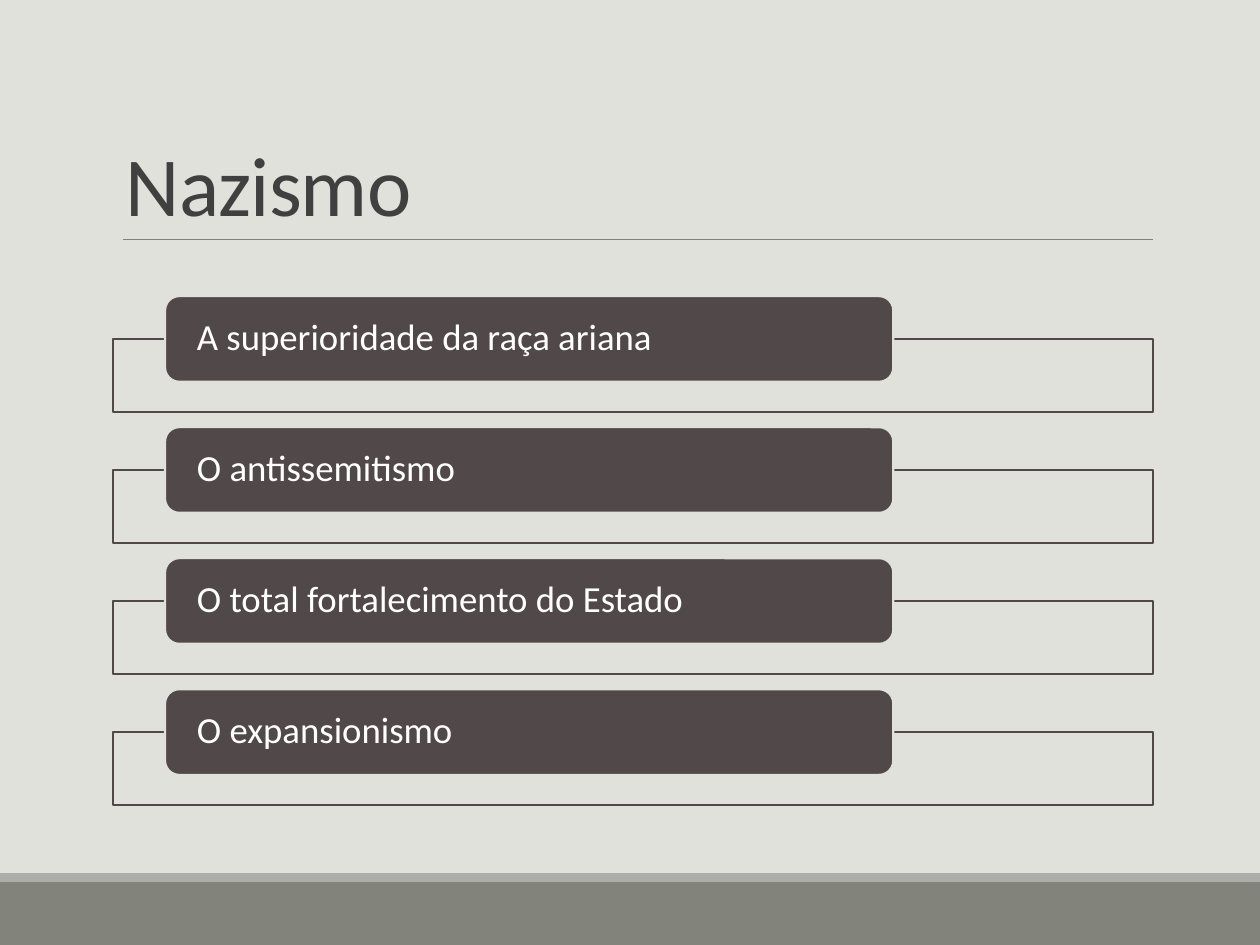
from pptx import Presentation
from pptx.dml.color import RGBColor
from pptx.enum.shapes import MSO_CONNECTOR as Connector, MSO_SHAPE as Shape
from pptx.enum.text import MSO_ANCHOR as Anchor, PP_ALIGN as Align
from pptx.oxml.ns import qn
from pptx.util import Inches, Pt
from lxml.etree import SubElement

BACKGROUND = "E1E1DB"
DARK = "514949"
TOPICS = [
    "A superioridade da raça ariana",
    "O antissemitismo",
    "O total fortalecimento do Estado",
    "O expansionismo",
]


def color(value):
    return RGBColor.from_string(value)


def write(shape, text, size, ink, font="Calibri", anchor=Anchor.MIDDLE,
          margins=(0.1, 0.05), line_spacing=0.9, tracking=None):
    frame = shape.text_frame
    frame.word_wrap = True
    frame.vertical_anchor = anchor
    frame.margin_left = frame.margin_right = Inches(margins[0])
    frame.margin_top = frame.margin_bottom = Inches(margins[1])
    paragraph = frame.paragraphs[0]
    paragraph.alignment = Align.LEFT
    paragraph.line_spacing = line_spacing
    run = paragraph.add_run()
    run.text = text
    run.font.name = font
    run.font.size = Pt(size)
    run.font.color.rgb = color(ink)
    if tracking is not None:
        run._r.get_or_add_rPr().set("spc", str(int(tracking * 100)))


class SlideBuilder:
    line_width = 1.25

    def __init__(self, slide, background):
        self.slide = slide
        slide.background.fill.solid()
        slide.background.fill.fore_color.rgb = color(background)

    def box(self, left, top, width, height, fill, line=None, kind=Shape.RECTANGLE, opacity=None):
        shape = self.slide.shapes.add_shape(
            kind, Inches(left), Inches(top), Inches(width), Inches(height))
        shape.shadow.inherit = False
        shape.fill.solid()
        shape.fill.fore_color.rgb = color(fill)
        if opacity is not None:
            fill_color = shape._element.spPr.find(qn("a:solidFill"))[0]
            SubElement(fill_color, qn("a:alpha")).set("val", str(opacity * 1000))
        if line:
            shape.line.color.rgb = color(line)
            shape.line.width = Pt(self.line_width)
        else:
            shape.line.fill.background()
        return shape

    def rule(self, left, right, top, ink, width):
        connector = self.slide.shapes.add_connector(
            Connector.STRAIGHT, Inches(left), Inches(top), Inches(right), Inches(top))
        connector.line.color.rgb = color(ink)
        connector.line.width = Pt(width)
        SubElement(connector._element.spPr, qn("a:effectLst"))

    def text(self, left, top, width, height, content, **style):
        shape = self.slide.shapes.add_textbox(
            Inches(left), Inches(top), Inches(width), Inches(height))
        write(shape, content, **style)

    def topic(self, top, content):
        self.box(0.9, top + 0.34, 8.25, 0.58, BACKGROUND, line=DARK, opacity=90)
        label = self.box(1.31, top, 5.78, 0.68, DARK, line=BACKGROUND,
                         kind=Shape.ROUNDED_RECTANGLE)
        write(label, content, size=21, ink="FFFFFF", margins=(0.22, 0))


def main():
    presentation = Presentation()
    presentation.slide_width = Inches(10)
    presentation.slide_height = Inches(7.5)
    slide = presentation.slides.add_slide(presentation.slide_layouts[6])
    builder = SlideBuilder(slide, BACKGROUND)
    builder.box(0, 7, 10, 0.5, "82847C")
    builder.box(0, 6.93, 10, 0.07, "ACADA8")
    builder.rule(0.98, 9.15, 1.9, "808080", 0.5)
    builder.text(0.9, 0.31, 8.25, 1.59, "Nazismo", size=48, ink="404040",
                 anchor=Anchor.BOTTOM, line_spacing=0.85, tracking=-0.5)
    for index, content in enumerate(TOPICS):
        builder.topic(2.35 + 1.04 * index, content)
    presentation.save("out.pptx")


if __name__ == "__main__":
    main()
